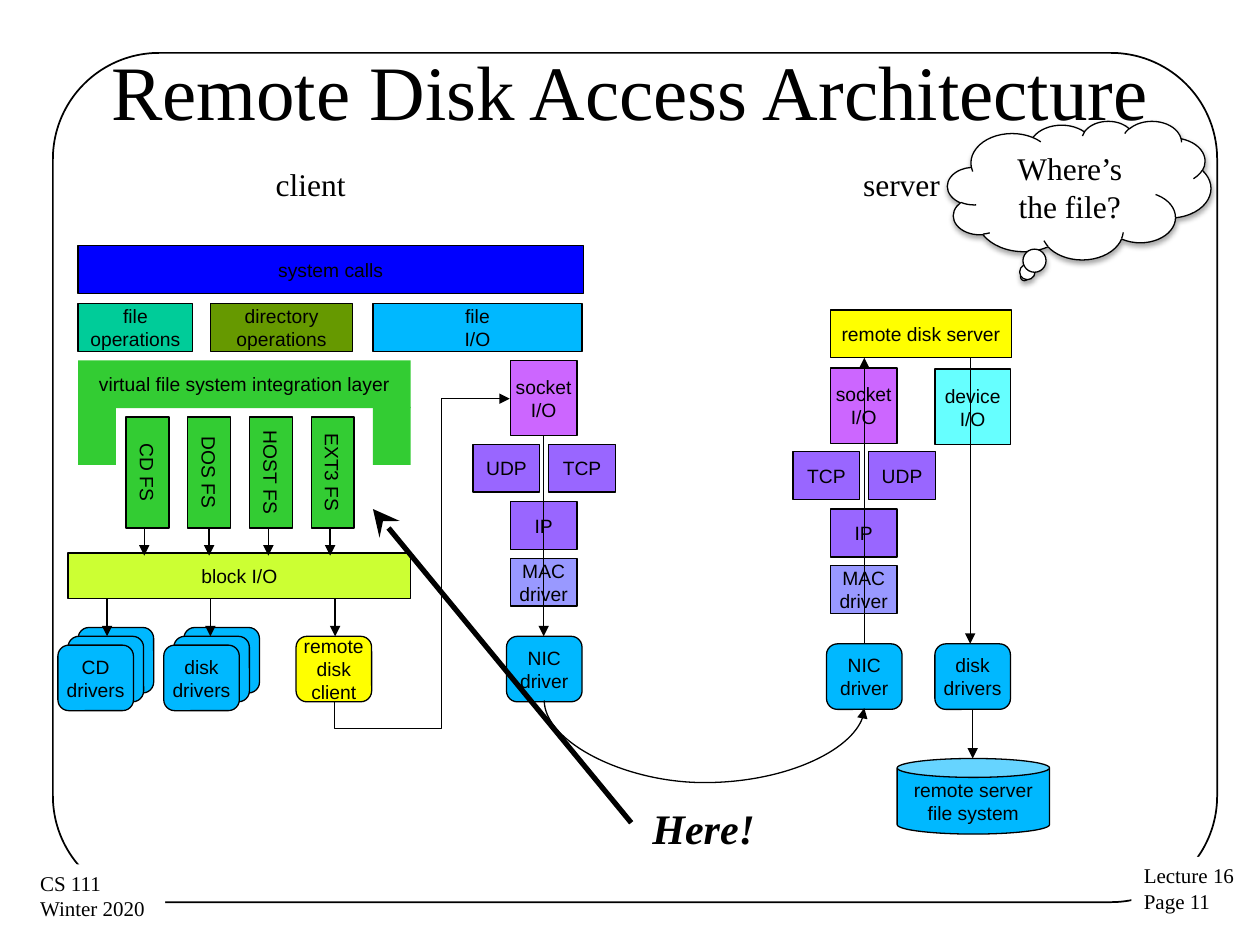
from lxml import etree
from pptx import Presentation
from pptx.dml.color import RGBColor
from pptx.enum.shapes import MSO_CONNECTOR, MSO_SHAPE
from pptx.enum.text import MSO_ANCHOR, PP_ALIGN
from pptx.oxml.ns import qn
from pptx.util import Inches, Pt

RECT, ROUNDED = MSO_SHAPE.RECTANGLE, MSO_SHAPE.ROUNDED_RECTANGLE
CAN, CLOUD = MSO_SHAPE.CAN, MSO_SHAPE.CLOUD_CALLOUT
STRAIGHT, ELBOW, CURVE = MSO_CONNECTOR.STRAIGHT, MSO_CONNECTOR.ELBOW, MSO_CONNECTOR.CURVE
LEFT, CENTER = PP_ALIGN.LEFT, PP_ALIGN.CENTER
TOP, MIDDLE = MSO_ANCHOR.TOP, MSO_ANCHOR.MIDDLE

BLACK = RGBColor(0x00, 0x00, 0x00)
WHITE = RGBColor(0xFF, 0xFF, 0xFF)
BLUE = RGBColor(0x00, 0x00, 0xFF)
SKY = RGBColor(0x00, 0xB8, 0xFF)
AQUA = RGBColor(0x66, 0xFF, 0xFF)
TEAL = RGBColor(0x00, 0xCC, 0x99)
OLIVE = RGBColor(0x66, 0x99, 0x00)
GREEN = RGBColor(0x33, 0xCC, 0x33)
LIME = RGBColor(0xCC, 0xFF, 0x33)
YELLOW = RGBColor(0xFF, 0xFF, 0x00)
ORCHID = RGBColor(0xCC, 0x66, 0xFF)
PURPLE = RGBColor(0x99, 0x66, 0xFF)
LAVENDER = RGBColor(0x99, 0x99, 0xFF)
SERIF, SANS = "Times New Roman", "Arial"

prs = Presentation()
prs.slide_width, prs.slide_height = Inches(10), Inches(7.5)
COL, ROW = prs.slide_width / 100, prs.slide_height / 75
slide = prs.slides.add_slide(prs.slide_layouts[6])


def block(text, left, top, width, height, *, shape=RECT, fill=None, line=BLACK, weight=0.75,
          size=11, font=SANS, bold=False, italic=False, align=CENTER, anchor=MIDDLE,
          wrap=False, inset=0.09, rotation=0):
    """Place a labelled shape on the grid; shape=None makes a plain text box."""
    box = [round(n) for n in (left * COL, top * ROW, width * COL, height * ROW)]
    if shape is None:
        item = slide.shapes.add_textbox(*box)
    else:
        item = slide.shapes.add_shape(shape, *box)
        item.shadow.inherit = False
        if fill is None:
            item.fill.background()
        else:
            item.fill.solid()
            item.fill.fore_color.rgb = fill
        if line is None:
            item.line.fill.background()
        else:
            item.line.color.rgb = line
            item.line.width = Pt(weight)
    item.rotation = rotation
    if text:
        frame = item.text_frame
        frame.text = text
        frame.word_wrap = wrap
        frame.vertical_anchor = anchor
        frame.margin_left = frame.margin_right = Inches(inset)
        frame.margin_top = frame.margin_bottom = Inches(0.05)
        for paragraph in frame.paragraphs:
            paragraph.alignment = align
            style = paragraph.font
            style.size, style.name, style.bold, style.italic = Pt(size), font, bold, italic
            style.color.rgb = BLACK
    return item


def arrow(x1, y1, x2, y2, *, kind=STRAIGHT, weight=0.75, head="triangle", head_size="med",
          preset=None, rotation=0, adjust=()):
    """Connect two grid points; a bent path is laid out before its rotation."""
    link = slide.shapes.add_connector(kind, *[round(n) for n in (x1 * COL, y1 * ROW, x2 * COL, y2 * ROW)])
    link.line.color.rgb = BLACK
    link.line.width = Pt(weight)
    props = link.element.spPr
    etree.SubElement(props.find(qn("a:ln")), qn("a:tailEnd"), type=head, w=head_size, len=head_size)
    etree.SubElement(props, qn("a:effectLst"))
    if preset:
        props.find(qn("a:xfrm")).set("rot", str(rotation * 60000))
        geometry = props.find(qn("a:prstGeom"))
        geometry.set("prst", preset)
        guides = geometry.find(qn("a:avLst"))
        if guides is None:
            guides = etree.SubElement(geometry, qn("a:avLst"))
        for number, share in enumerate(adjust, 1):
            etree.SubElement(guides, qn("a:gd"), name=f"adj{number}", fmla=f"val {round(share * 100000)}")


# Frame, footers and title
frame_border = block("", 4.2, 4.2, 92.4, 67.4, shape=ROUNDED, weight=1)
frame_border.adjustments[0] = 0.125
for footer, left, top, width in (("Lecture 16\nPage 11", 89.8, 68, 9.3),
                                 ("CS 111\nWinter 2020", 2.2, 68.6, 10.9)):
    block(footer, left, top, width, 5.1, fill=WHITE, line=None, size=12, font=SERIF,
          align=LEFT, anchor=TOP, inset=0.1)
block("Remote Disk Access Architecture", 3.9, 3, 92.2, 8.3, shape=None, size=44,
      font=SERIF, wrap=True, inset=0.1)
for side, left in (("client", 15.2), ("server", 62.1)):
    block(side, left, 12.6, 18.9, 3.9, shape=None, size=18, font=SERIF, anchor=TOP, wrap=True)

# Client system call interface
block("system calls", 6.2, 19.5, 40.1, 3.8, fill=BLUE)
for label, left, width, color in (("file\noperations", 6.2, 9.1, TEAL),
                                  ("directory\noperations", 16.7, 11.3, OLIVE),
                                  ("file\nI/O", 29.6, 16.6, SKY)):
    block(label, left, 24.1, width, 3.8, fill=color)

# Client file systems
block("virtual file system integration layer", 6.2, 28.6, 26.4, 3.8, fill=GREEN, line=None)
for left in (6.2, 29.6):
    block("", left, 32.3, 3, 4.6, fill=GREEN, line=None)
block("block I/O", 5.4, 43.9, 27.2, 3.6, fill=LIME)
for index, (file_system, arrow_x) in enumerate((("CD FS", 11.45), ("DOS FS", 16.6),
                                                ("HOST FS", 21.3), ("EXT3 FS", 26.2))):
    block(file_system, 7.3 + 4.9 * index, 35.8, 8.8, 3.4, fill=GREEN, rotation=90)
    arrow(arrow_x, 41.9, arrow_x, 44.1)

# Client drivers under block I/O
for label, left in (("CD\ndrivers", 4.6), ("disk\ndrivers", 13)):
    for depth in (2, 1, 0):
        block("" if depth else label, left + 0.8 * depth, 51.2 - 0.7 * depth, 6, 5.2,
              shape=ROUNDED, fill=SKY)
block("remote\ndisk\nclient", 23.5, 50.5, 6, 5.2, shape=ROUNDED, fill=YELLOW)
for x in (8.5, 16.7, 26.6):
    arrow(x, 47.5, x, 50.5)

# Network stacks of both sides
for left, top, transports in ((40.5, 28.6, ("UDP", "TCP")), (65.9, 29.2, ("TCP", "UDP"))):
    block("socket\nI/O", left, top, 5.3, 6, fill=ORCHID)
    for transport, shift in zip(transports, (-2.95, 3.05)):
        block(transport, left + shift, top + 6.65, 5.3, 3.8, fill=PURPLE)
    block("IP", left, top + 11.2, 5.3, 3.8, fill=PURPLE)
    block("MAC\ndriver", left, top + 15.7, 5.3, 3.8, fill=LAVENDER)
    block("NIC\ndriver", left - 0.3, top + 21.9, 6, 5.2, shape=ROUNDED, fill=SKY)

# Server disk path
block("remote disk server", 65.9, 24.6, 14.4, 3.8, fill=YELLOW)
block("device\nI/O", 74.2, 29.3, 6, 6, fill=AQUA)
block("disk\ndrivers", 74.2, 51.1, 6, 5.2, shape=ROUNDED, fill=SKY)
block("remote server\nfile system", 71.2, 60.2, 12.1, 6, shape=CAN, fill=SKY)

# Request path from the remote disk client to the server's disk
arrow(45.5, 50.6, 21.5, 36.7, kind=ELBOW, preset="bentConnector4", rotation=90,
      adjust=(-0.09, 0.61))
arrow(43.15, 34.6, 43.15, 50.5)
arrow(56.2, 43.2, 55.6, 68.6, kind=CURVE, preset="curvedConnector3", rotation=270,
      adjust=(10.89,))
arrow(68.6, 51.1, 68.6, 28.4)
arrow(77, 28.4, 77, 51.1)
arrow(77.2, 56.3, 77.2, 60.2)

# Question and answer
question = block("Where’s the file?", 75.2, 9.6, 20.9, 11, shape=CLOUD, fill=WHITE,
                 size=18, font=SERIF, wrap=True, inset=0.1)
shadow = etree.SubElement(question.element.spPr.find(qn("a:effectLst")), qn("a:outerShdw"),
                          blurRad=str(Pt(3.1)), dist=str(Pt(1.8)), dir="5400000", rotWithShape="0")
shadow_color = etree.SubElement(shadow, qn("a:srgbClr"), val=str(BLACK))
etree.SubElement(shadow_color, qn("a:alpha"), val="35000")
arrow(50.1, 65.3, 29.6, 40.4, weight=3, head="stealth", head_size="lg")
block("Here!", 50.8, 63.2, 10.2, 5, shape=None, size=24, font=SERIF, bold=True,
      italic=True, align=LEFT, anchor=TOP, inset=0.1)

prs.save("out.pptx")
